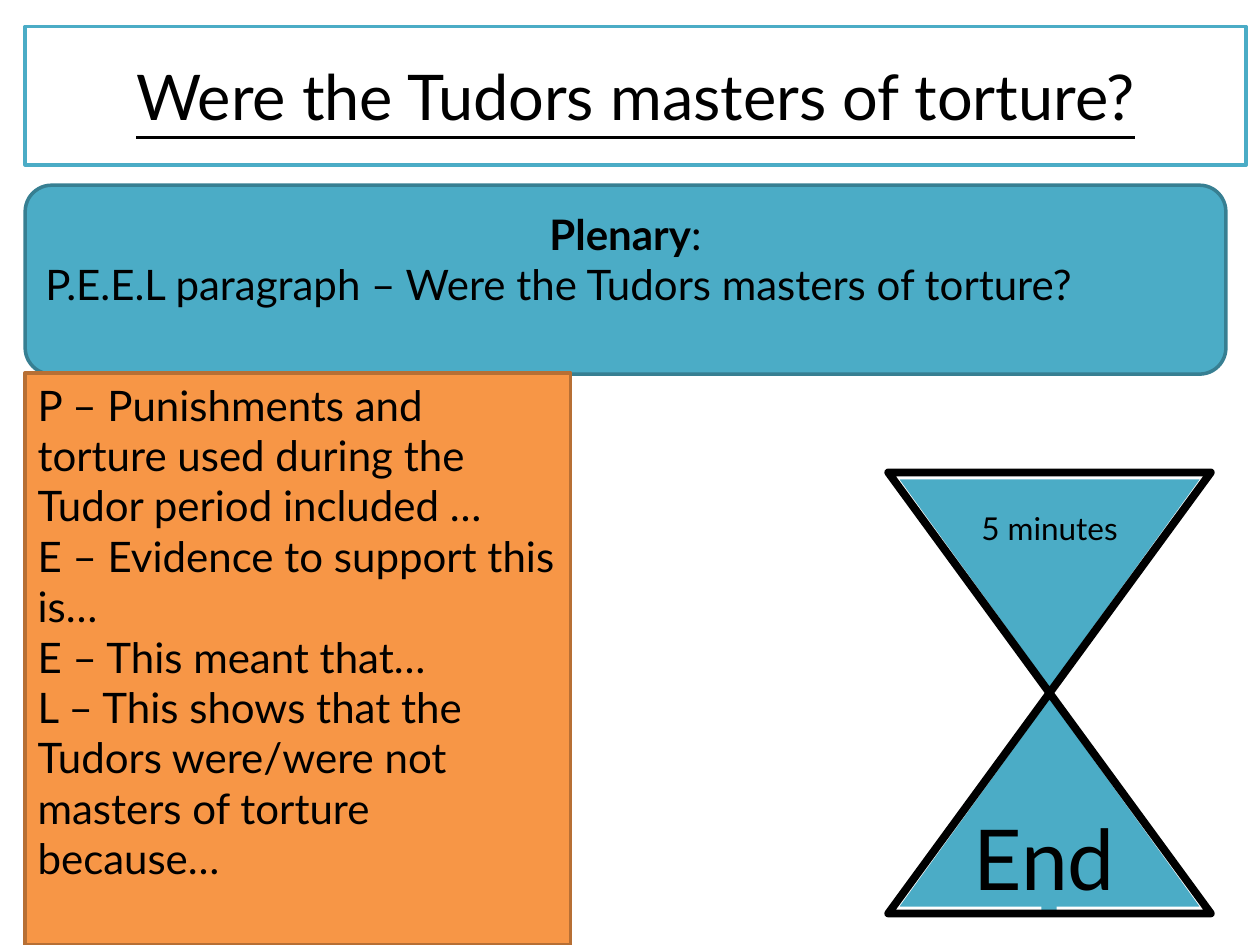
"""Build the Tudor torture plenary slide with a five-minute hourglass."""
from dataclasses import dataclass

from lxml.etree import SubElement
from pptx import Presentation
from pptx.dml.color import RGBColor
from pptx.enum.shapes import MSO_SHAPE
from pptx.enum.text import MSO_ANCHOR, MSO_AUTO_SIZE, PP_ALIGN
from pptx.oxml.ns import qn
from pptx.util import Inches, Pt


@dataclass(frozen=True)
class Theme:
    font: str = "Lato"
    ink: str = "000000"
    paper: str = "FFFFFF"
    teal: str = "4BACC6"
    teal_edge: str = "377F92"
    orange: str = "F79646"
    orange_edge: str = "B76F34"
    title_size: int = 36
    body_size: int = 24
    timer_size: int = 18
    end_size: int = 48


THEME = Theme()
QUESTION = "Were the Tudors masters of torture?"
PLENARY = [[("Plenary", True), (":", False)],
           [(f"P.E.E.L paragraph – {QUESTION}", False)]]
PROMPTS = [
    "P – Punishments and torture used during the Tudor period included …",
    "E – Evidence to support this is…",
    "E – This meant that…",
    "L – This shows that the Tudors were/were not masters of torture because…",
]
LEFT = 0.2
TITLE_BOX = (LEFT, 0.21, 9.69, 1.1)
PLENARY_BOX = (LEFT, 1.47, 9.53, 1.5)
PROMPT_BOX = (LEFT, 2.96, 4.33, 4.54)
HOURGLASS = [
    (MSO_SHAPE.ISOSCELES_TRIANGLE, (7.11, 5.52, 2.44, 1.69), 0, THEME.teal, THEME.paper, 2),
    (MSO_SHAPE.ISOSCELES_TRIANGLE, (7.11, 3.79, 2.44, 1.69), 180, THEME.teal, THEME.paper, 2),
    (MSO_SHAPE.PENTAGON, (7.46, 6.33, 1.73, 0.12), 270, THEME.teal, None, 0),
    (MSO_SHAPE.FLOWCHART_COLLATE, (7.05, 3.75, 2.56, 3.5), 0, None, THEME.ink, 4.5),
]
LABELS = [
    ("5 minutes", (7.58, 3.99, 1.5, 0.4), THEME.timer_size, PP_ALIGN.CENTER),
    ("End", (7.63, 6.35, 1.56, 0.91), THEME.end_size, PP_ALIGN.LEFT),
]


def paint(shape, fill, edge, width):
    if fill:
        shape.fill.solid()
        shape.fill.fore_color.rgb = RGBColor.from_string(fill)
    else:
        shape.fill.background()
    if edge:
        shape.line.color.rgb = RGBColor.from_string(edge)
        shape.line.width = Pt(width)
    else:
        shape.line.fill.background()


def add_box(page, kind, place, fill, edge, width):
    box = page.shapes.add_shape(kind, *map(Inches, place))
    box.shadow.inherit = False
    paint(box, fill, edge, width)
    return box


def write(frame, paragraphs, size, aligns):
    for index, (spans, align) in enumerate(zip(paragraphs, aligns)):
        para = frame.paragraphs[0] if index == 0 else frame.add_paragraph()
        para.alignment = align
        para.font.name = THEME.font
        para.font.size = Pt(size)
        para.font.color.rgb = RGBColor.from_string(THEME.ink)
        for text, bold in spans:
            span = para.add_run()
            span.text = text
            if bold:
                span.font.bold = True


def add_title(page):
    title = page.shapes.title
    title.left, title.top, title.width, title.height = map(Inches, TITLE_BOX)
    outline = SubElement(title.element.spPr, qn("a:prstGeom"), prst="roundRect")
    SubElement(outline, qn("a:avLst"))
    paint(title, THEME.paper, THEME.teal, 2)
    frame = title.text_frame
    frame.vertical_anchor = MSO_ANCHOR.MIDDLE
    frame.auto_size = MSO_AUTO_SIZE.NONE
    write(frame, [[(QUESTION, False)]], THEME.title_size, [PP_ALIGN.CENTER])
    frame.paragraphs[0].font.underline = True


def add_plenary(page):
    box = add_box(page, MSO_SHAPE.ROUNDED_RECTANGLE, PLENARY_BOX, THEME.teal, THEME.teal_edge, 2)
    box.adjustments[0] = 0.14
    frame = box.text_frame
    frame.vertical_anchor = MSO_ANCHOR.MIDDLE
    frame.margin_bottom = Inches(0.38)
    write(frame, PLENARY, THEME.body_size, [PP_ALIGN.CENTER, PP_ALIGN.LEFT])


def add_prompts(page):
    box = add_box(page, MSO_SHAPE.RECTANGLE, PROMPT_BOX, THEME.orange, THEME.orange_edge, 2)
    box.text_frame.vertical_anchor = MSO_ANCHOR.TOP
    lines = [[(prompt, False)] for prompt in PROMPTS]
    write(box.text_frame, lines, THEME.body_size, [PP_ALIGN.LEFT] * len(lines))


def add_hourglass(page):
    for kind, place, turn, fill, edge, width in HOURGLASS:
        add_box(page, kind, place, fill, edge, width).rotation = turn
    for text, place, size, align in LABELS:
        frame = page.shapes.add_textbox(*map(Inches, place)).text_frame
        frame.word_wrap = False
        frame.auto_size = MSO_AUTO_SIZE.SHAPE_TO_FIT_TEXT
        write(frame, [[(text, False)]], size, [align])


def main():
    deck = Presentation()
    deck.slide_width, deck.slide_height = Inches(10), Inches(7.5)
    page = deck.slides.add_slide(deck.slide_layouts.get_by_name("Title Only"))
    add_title(page)
    add_plenary(page)
    add_prompts(page)
    add_hourglass(page)
    deck.save("out.pptx")


if __name__ == "__main__":
    main()
